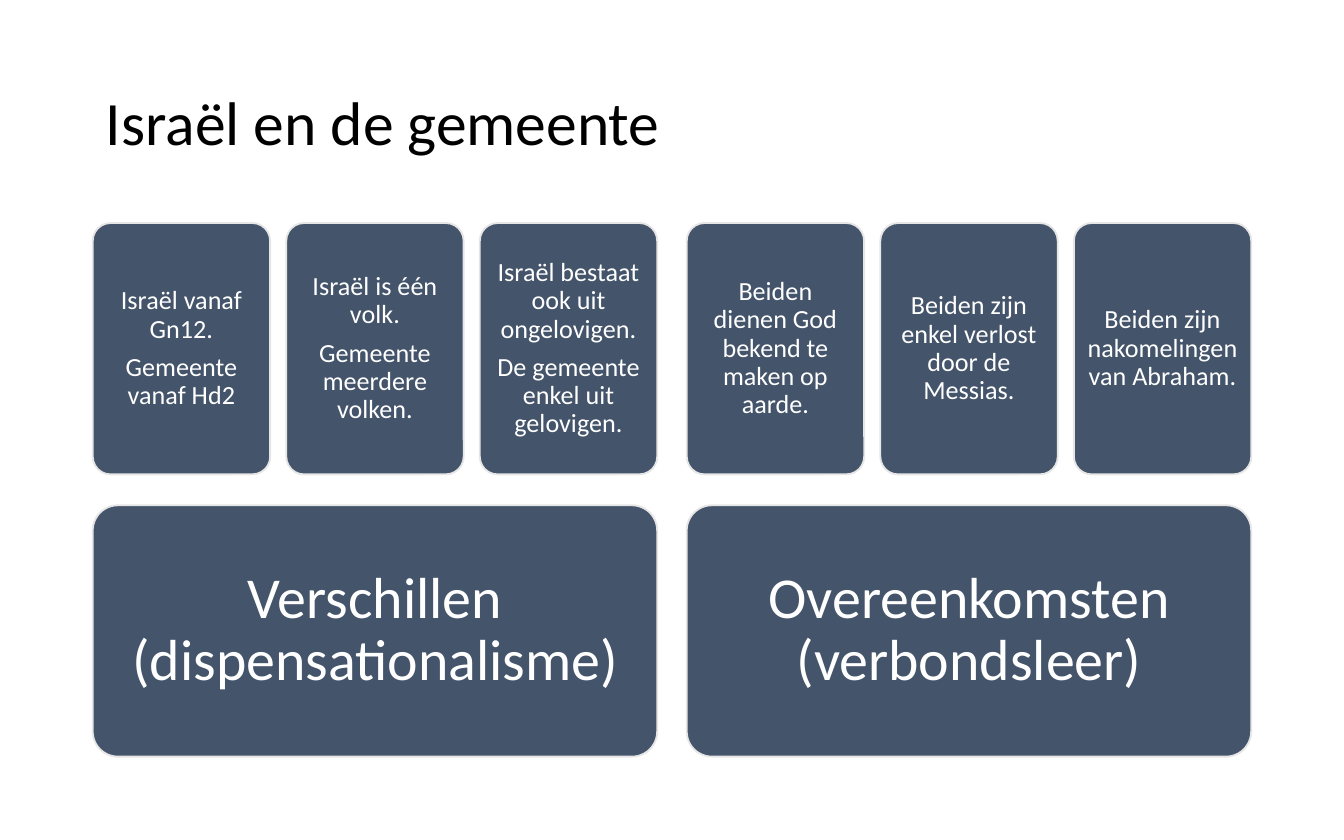
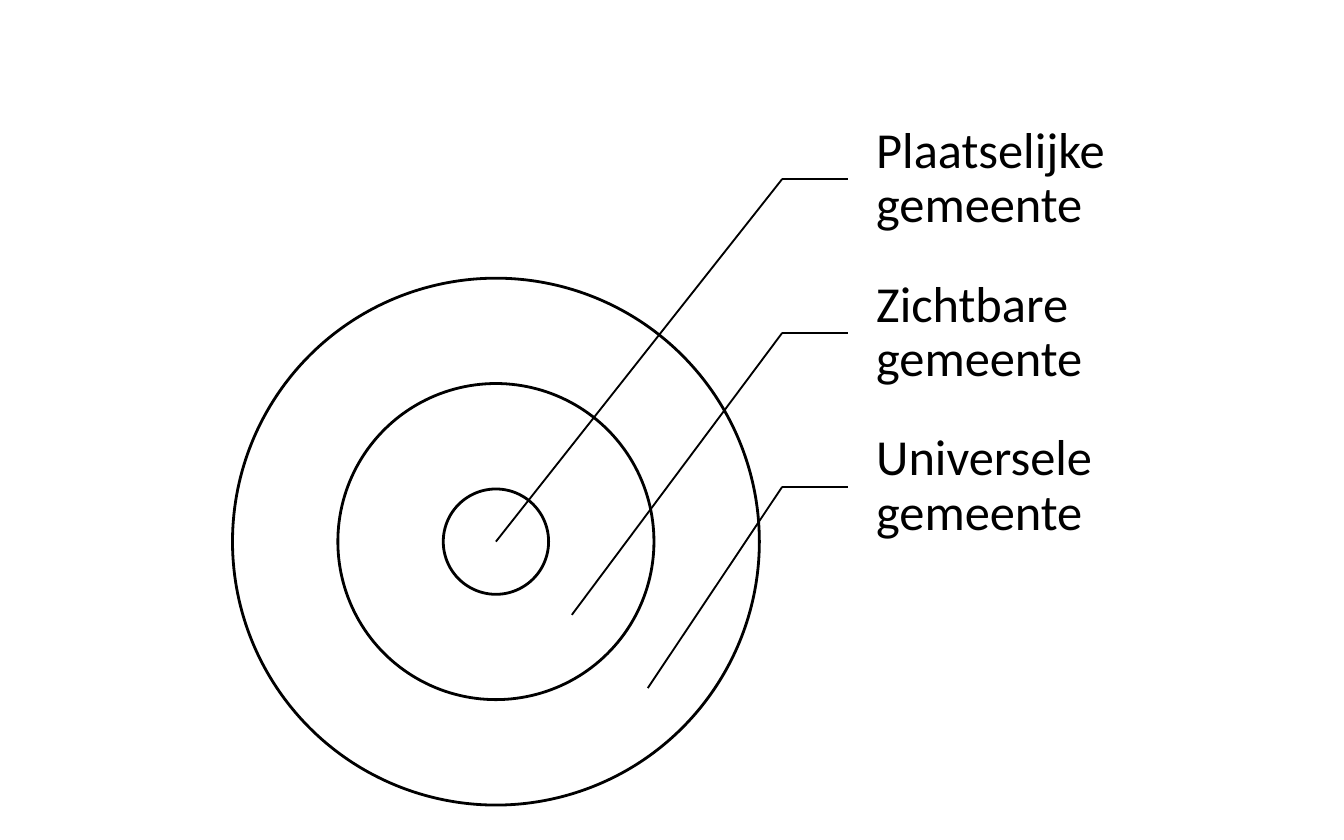
from pptx import Presentation
from pptx.dml.color import RGBColor
from pptx.enum.shapes import MSO_CONNECTOR, MSO_SHAPE
from pptx.enum.text import MSO_ANCHOR, PP_ALIGN
from pptx.oxml.ns import qn
from pptx.util import Inches, Pt
from lxml import etree

ROUNDED = MSO_SHAPE.ROUNDED_RECTANGLE
OVAL = MSO_SHAPE.OVAL
STRAIGHT = MSO_CONNECTOR.STRAIGHT
MIDDLE = MSO_ANCHOR.MIDDLE
LEFT, CENTER = PP_ALIGN.LEFT, PP_ALIGN.CENTER
LEFT_SIDE = 1

COLUMNS = 100
MARGIN = 6.9
TITLE = "Israël en de gemeente"
GROUPS = [
    ("Verschillen (dispensationalisme)", [
        "Israël vanaf Gn12.\nGemeente vanaf Hd2",
        "Israël is één volk.\nGemeente meerdere volken.",
        "Israël bestaat ook uit ongelovigen.\nDe gemeente enkel uit gelovigen.",
    ]),
    ("Overeenkomsten (verbondsleer)", [
        "Beiden dienen God bekend te maken op aarde.",
        "Beiden zijn enkel verlost door de Messias.",
        "Beiden zijn nakomelingen van Abraham.",
    ]),
]
RINGS = ["Plaatselijke gemeente", "Zichtbare gemeente", "Universele gemeente"]


def color(value):
    return RGBColor.from_string(value)


class Deck:
    font = "Calibri"
    ink = color("000000")
    paper = color("FFFFFF")
    card_fill = color("44546A")
    card_line = color("E7E6E6")

    def __init__(self, prs):
        self.prs = prs
        self.unit = prs.slide_width / COLUMNS
        self.s = None

    def grid(self, *cells):
        return [round(cell * self.unit) for cell in cells]

    def add_slide(self):
        self.s = self.prs.slides.add_slide(self.prs.slide_layouts[6])
        self.s.background.fill.solid()
        self.s.background.fill.fore_color.rgb = self.paper

    def set_text(self, sp, text, size, ink, align, insets):
        tf = sp.text_frame
        tf.text = text
        tf.word_wrap = True
        tf.vertical_anchor = MIDDLE
        tf.margin_left, tf.margin_top, tf.margin_right, tf.margin_bottom = self.grid(*insets)
        for p in tf.paragraphs:
            p.alignment = align
            p.line_spacing = 0.9
            for r in p.runs:
                r.font.name = self.font
                r.font.size = Pt(size)
                r.font.color.rgb = ink
        for p in tf.paragraphs[:-1]:
            p.space_after = Pt(5.3)

    def text(self, box, text, size, insets):
        sp = self.s.shapes.add_textbox(*self.grid(*box))
        self.set_text(sp, text, size, self.ink, LEFT, insets)
        return sp

    def shape(self, kind, box, fill, line, width):
        sp = self.s.shapes.add_shape(kind, *self.grid(*box))
        sp.shadow.inherit = False
        sp.fill.solid()
        sp.fill.fore_color.rgb = fill
        sp.line.color.rgb = line
        sp.line.width = Pt(width)
        return sp

    def card(self, box, text, size, inset):
        sp = self.shape(ROUNDED, box, self.card_fill, self.card_line, 1)
        sp.adjustments[0] = 0.1
        self.set_text(sp, text, size, self.paper, CENTER, [inset] * 4)

    def ring(self, x, y, diameter):
        box = (x - diameter / 2, y - diameter / 2, diameter, diameter)
        self.shape(OVAL, box, self.paper, self.ink, 1.5)

    def line(self, start, end):
        cxn = self.s.shapes.add_connector(STRAIGHT, *self.grid(*start, *end))
        cxn.line.color.rgb = self.ink
        cxn.line.width = Pt(1)
        etree.SubElement(cxn._element.spPr, qn("a:effectLst"))
        return cxn


def comparison_slide(deck):
    deck.add_slide()
    deck.text((MARGIN, 3.3, 86.2, 12.1), TITLE, 33, (1, 0.5, 1, 0.5))
    group_width, group_gap = 42, 2.2
    card_width, card_height = 13.2, 18.7
    points_top, heading_top = 16.6, 37.6
    for i, (heading, points) in enumerate(GROUPS):
        left = MARGIN + i * (group_width + group_gap)
        deck.card((left, heading_top, group_width, card_height), heading, 31, 1.3)
        step = (group_width - card_width) / (len(points) - 1)
        for j, point in enumerate(points):
            deck.card((left + j * step, points_top, card_width, card_height), point, 14, 0.6)


def rings_slide(deck):
    deck.add_slide()
    center_x, center_y, core = 36.9, 40.3, 7.84
    for factor in (5, 3, 1):
        deck.ring(center_x, center_y, factor * core)
    elbow_x, label_x = 58.2, 63.1
    label_top, label_height = 7.6, 11.45
    for i, name in enumerate(RINGS):
        top = label_top + i * label_height
        middle = top + label_height / 2
        label = deck.text((label_x, top, 19.6, label_height), name, 27, (2.1, 0.4, 0.4, 0.4))
        shelf = deck.line((elbow_x, middle), (label_x, middle))
        shelf.end_connect(label, LEFT_SIDE)
        deck.line((elbow_x, middle), (center_x + 5.65 * i, center_y + 5.45 * i))


def main():
    prs = Presentation()
    prs.slide_width, prs.slide_height = Inches(10), Inches(6.25)
    deck = Deck(prs)
    comparison_slide(deck)
    rings_slide(deck)
    prs.save("out.pptx")


if __name__ == "__main__":
    main()
